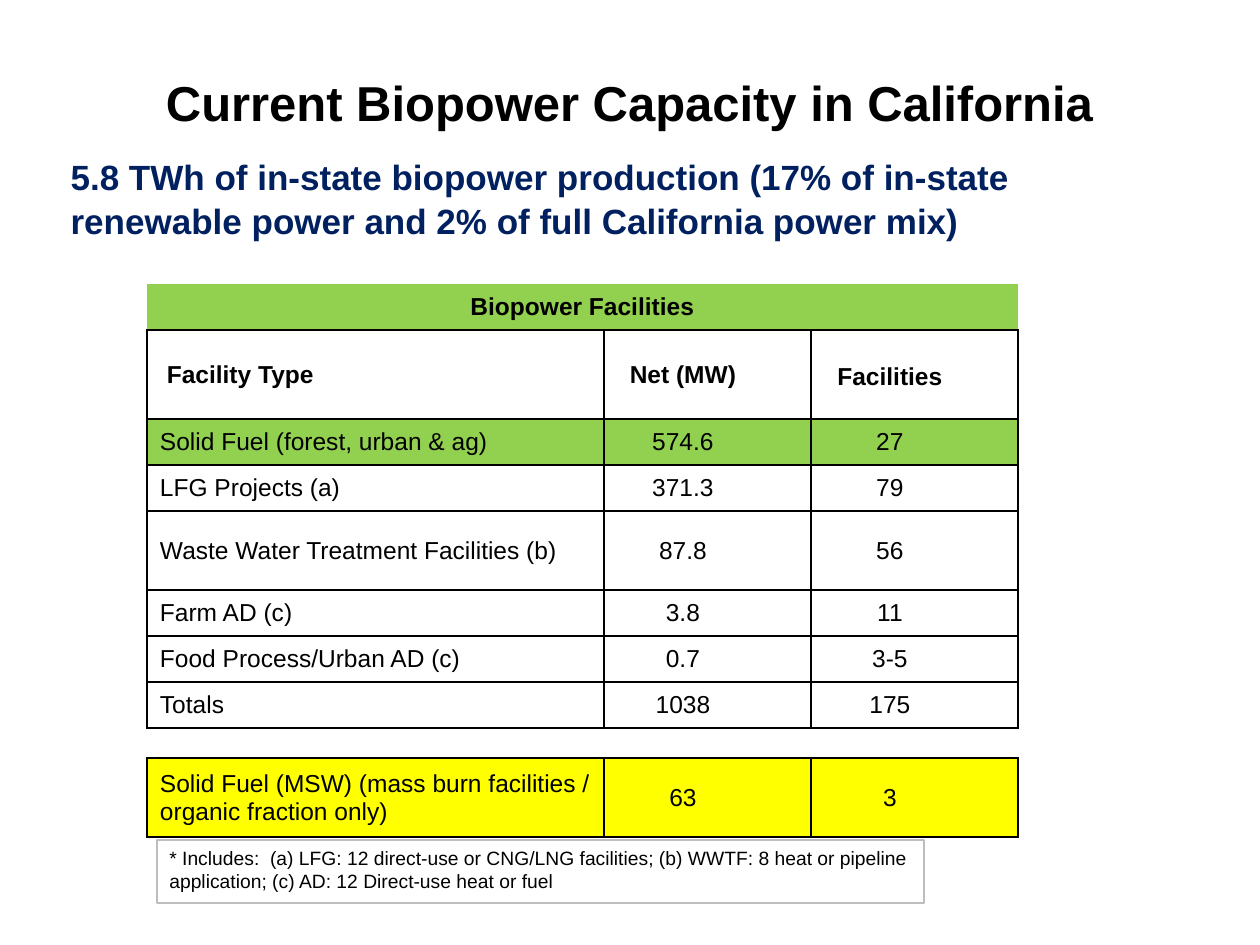
import pptx
import pptx.util
import pptx.dml.color
import pptx.enum.shapes
import pptx.enum.text
import pptx.oxml.ns
import lxml.etree
from dataclasses import dataclass

SCALE = 914400 / 126
ALIGN = pptx.enum.text.PP_ALIGN
ANCHOR = pptx.enum.text.MSO_ANCHOR


@dataclass(frozen=True)
class Theme:
    font: str = "Arial"
    black: str = "000000"
    white: str = "FFFFFF"
    navy: str = "002060"
    green: str = "92D050"
    yellow: str = "FFFF00"
    grey: str = "BDBDBD"
    title: int = 28
    lead: int = 20
    table: int = 14
    note: int = 11
    gap: int = 10


theme = Theme()


def px(value):
    return pptx.util.Emu(round(value * SCALE))


def write_text(frame, text, size, color=theme.black, bold=False, align=ALIGN.LEFT,
               anchor=ANCHOR.TOP):
    frame.word_wrap = True
    frame.vertical_anchor = anchor
    para = frame.paragraphs[0]
    para.alignment = align
    span = para.add_run()
    span.text = text
    span.font.name = theme.font
    span.font.size = pptx.util.Pt(size)
    span.font.bold = bold
    span.font.color.rgb = pptx.dml.color.RGBColor.from_string(color)
    return para


deck = pptx.Presentation()
deck.slide_width, deck.slide_height = px(1260), px(945)
page = deck.slides.add_slide(deck.slide_layouts[1])

title = page.shapes.title
title.left, title.top, title.width, title.height = px(89), px(66), px(1081), px(72)
title.text_frame.auto_size = pptx.enum.text.MSO_AUTO_SIZE.NONE
write_text(title.text_frame, "Current Biopower Capacity in California", size=theme.title,
           bold=True, align=ALIGN.CENTER, anchor=ANCHOR.MIDDLE)

body = page.placeholders[1]
body.left, body.top, body.width, body.height = px(58), px(147), px(1144), px(588)
body.text_frame.auto_size = pptx.enum.text.MSO_AUTO_SIZE.NONE
lead = write_text(
    body.text_frame,
    "5.8 TWh of in-state biopower production (17% of in-state renewable power "
    "and 2% of full California power mix)",
    size=theme.lead, color=theme.navy, bold=True)
lead.space_before = pptx.util.Pt(2)
lead.line_spacing = 1.05
lead_format = lead._p.get_or_add_pPr()
lead_format.set("marL", "0")
lead_format.set("indent", "0")
lxml.etree.SubElement(lead_format, pptx.oxml.ns.qn("a:buNone"))

note = page.shapes.add_shape(pptx.enum.shapes.MSO_SHAPE.RECTANGLE,
                             px(157), px(840), px(767), px(63))
note.shadow.inherit = False
note.fill.solid()
note.fill.fore_color.rgb = pptx.dml.color.RGBColor.from_string(theme.white)
note.line.color.rgb = pptx.dml.color.RGBColor.from_string(theme.grey)
note.line.width = pptx.util.Pt(0.75)
write_text(note.text_frame,
           "* Includes:  (a) LFG: 12 direct-use or CNG/LNG facilities; (b) WWTF: 8 heat or "
           "pipeline application; (c) AD: 12 Direct-use heat or fuel", size=theme.note)

column_widths = [457, 207, 207]
rows = [
    (46, theme.green, ["Biopower Facilities", "", ""]),
    (89, None, ["\u00a0Facility Type".replace("\u00a0", " "), "Net (MW)", "Facilities"]),
    (46, theme.green, ["Solid Fuel (forest, urban & ag)", "574.6", "27"]),
    (46, None, ["LFG Projects (a)", "371.3", "79"]),
    (79, None, ["Waste Water Treatment Facilities (b)", "87.8", "56"]),
    (46, None, ["Farm AD (c)", "3.8", "11"]),
    (46, None, ["Food Process/Urban AD (c)", "0.7", "3-5"]),
    (46, None, ["Totals", "1038", "175"]),
    (30, None, ["", "", ""]),
    (79, theme.yellow, ["Solid Fuel (MSW) (mass burn facilities / organic fraction only)",
                        "63", "3"]),
]
border_sides = {0: ["lnB"], 8: ["lnT", "lnB"]}
all_sides = ["lnL", "lnR", "lnT", "lnB"]

table = page.shapes.add_table(len(rows), len(column_widths), px(147), px(284),
                              px(sum(column_widths)),
                              px(sum(height for height, _, _ in rows))).table
table.first_row = False
table.horz_banding = False
for column, width in zip(table.columns, column_widths):
    column.width = px(width)

for row_index, (height, fill, texts) in enumerate(rows):
    table.rows[row_index].height = px(height)
    for column_index, text in enumerate(texts):
        cell = table.cell(row_index, column_index)
        is_label = column_index == 0 and row_index > 0
        cell.margin_left = px(13 if is_label else 1)
        cell.margin_right = px(50 if column_index > 0 else 1)
        cell.margin_top = px(5 if text == "Facilities" else 1)
        cell.margin_bottom = px(0)
        if text:
            write_text(cell.text_frame, text, size=theme.table, bold=row_index < 2,
                       align=ALIGN.LEFT if is_label else ALIGN.CENTER)
        else:
            lxml.etree.SubElement(cell.text_frame.paragraphs[0]._p,
                                  pptx.oxml.ns.qn("a:endParaRPr"), sz=str(theme.gap * 100))
        cell.vertical_anchor = ANCHOR.MIDDLE

        cell_format = cell._tc.get_or_add_tcPr()
        for side in all_sides:
            border = lxml.etree.SubElement(cell_format, pptx.oxml.ns.qn("a:" + side), w="12700")
            if side in border_sides.get(row_index, all_sides):
                paint = lxml.etree.SubElement(border, pptx.oxml.ns.qn("a:solidFill"))
                lxml.etree.SubElement(paint, pptx.oxml.ns.qn("a:srgbClr"), val=theme.black)
            else:
                lxml.etree.SubElement(border, pptx.oxml.ns.qn("a:noFill"))

        if fill:
            cell.fill.solid()
            cell.fill.fore_color.rgb = pptx.dml.color.RGBColor.from_string(fill)
        else:
            cell.fill.background()

table.cell(0, 0).merge(table.cell(0, 2))

deck.save("out.pptx")
